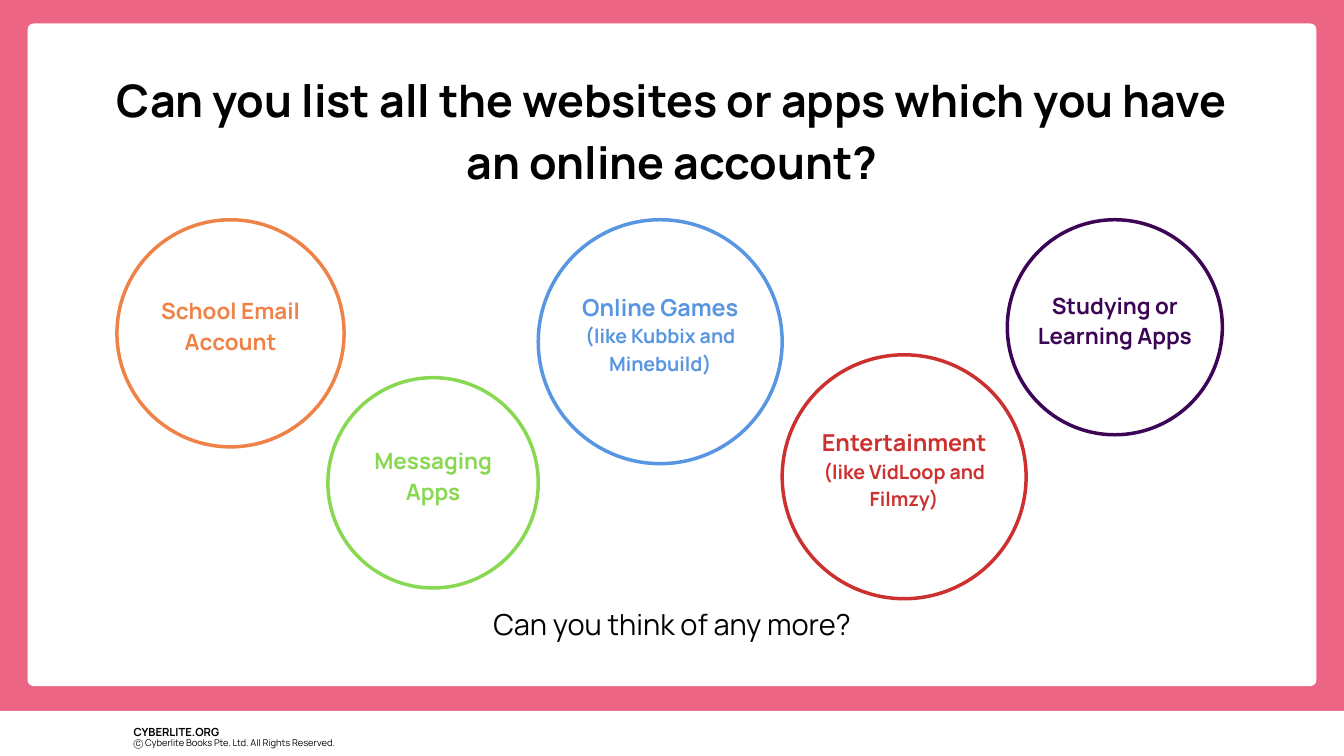
"""Build the slide asking which websites and apps hold an online account."""
from dataclasses import dataclass

import pptx
import pptx.dml.color
import pptx.enum.shapes
import pptx.enum.text
import pptx.util
from pptx.util import Inches

FONT = "Manrope"
COLOURS = {
    "pink": "EC6585",
    "white": "FFFFFF",
    "black": "000000",
    "orange": "EF8247",
    "purple": "3C0555",
    "blue": "5996E2",
    "red": "CC302F",
    "green": "88D852",
}
SHAPES = pptx.enum.shapes.MSO_SHAPE
ALIGN = pptx.enum.text.PP_ALIGN
ANCHOR = pptx.enum.text.MSO_ANCHOR


@dataclass(frozen=True)
class Line:
    text: str
    size: float
    bold: bool = True


@dataclass(frozen=True)
class Circle:
    left: float
    top: float
    diameter: float
    colour: str
    lines: tuple[Line, ...]


@dataclass(frozen=True)
class Label:
    left: float
    top: float
    width: float
    height: float
    line: Line
    align: ALIGN = ALIGN.CENTER
    spacing: float = 1.15


CIRCLES = (
    Circle(1.74, 3.27, 3.38, "orange", (Line("School Email Account", 24),)),
    Circle(14.99, 3.27, 3.2, "purple", (Line("Studying or Learning Apps", 24),)),
    Circle(8.01, 3.27, 3.63, "blue",
           (Line("Online Games", 25), Line("(like Kubbix and Minebuild)", 21))),
    Circle(11.64, 5.28, 3.63, "red",
           (Line("Entertainment", 25), Line("(like VidLoop and Filmzy)", 21))),
    Circle(4.88, 5.62, 3.13, "green", (Line("Messaging Apps", 24),)),
)
LABELS = (
    Label(1.99, 10.72, 1.85, 0.23, Line("CYBERLITE.ORG", 12), ALIGN.LEFT, 1.4),
    Label(1.99, 10.9, 4.63, 0.17,
          Line("Ⓒ Cyberlite Books Pte. Ltd. All Rights Reserved.", 10, False), ALIGN.LEFT, 1.4),
    Label(1.3, 0.97, 17.4, 1.74,
          Line("Can you list all the websites or apps which you have an online account?", 48)),
    Label(2.04, 8.95, 15.92, 0.52, Line("Can you think of any more?", 31, False)),
)


def rgb(name: str) -> pptx.dml.color.RGBColor:
    """Return the named colour."""
    return pptx.dml.color.RGBColor.from_string(COLOURS[name])


def add_panel(page, kind: SHAPES, left: float, top: float, width: float, height: float,
              outline: str | None = None):
    """Add a white shape with an optional coloured outline."""
    panel = page.shapes.add_shape(kind, Inches(left), Inches(top), Inches(width), Inches(height))
    panel.shadow.inherit = False
    panel.fill.solid()
    panel.fill.fore_color.rgb = rgb("white")
    if outline:
        panel.line.color.rgb = rgb(outline)
        panel.line.width = pptx.util.Pt(3.75)
    else:
        panel.line.fill.background()
    return panel


def add_text(page, left: float, top: float, width: float, height: float,
             lines: tuple[Line, ...], colour: str, align: ALIGN = ALIGN.CENTER,
             spacing: float = 1.15, inset: float = 0, anchor: ANCHOR = ANCHOR.TOP) -> None:
    """Add a wrapped text box with one paragraph per line."""
    box = page.shapes.add_textbox(Inches(left), Inches(top), Inches(width), Inches(height))
    frame = box.text_frame
    frame.word_wrap = True
    frame.vertical_anchor = anchor
    frame.margin_left = frame.margin_right = Inches(inset)
    frame.margin_top = frame.margin_bottom = Inches(inset)
    for index, line in enumerate(lines):
        para = frame.add_paragraph() if index else frame.paragraphs[0]
        para.text = line.text
        para.alignment = align
        para.line_spacing = spacing
        para.font.name = FONT
        para.font.size = pptx.util.Pt(line.size)
        para.font.bold = line.bold
        para.font.color.rgb = rgb(colour)


def add_circle(page, circle: Circle) -> None:
    """Add an outlined circle and the text box inside it."""
    size = circle.diameter
    add_panel(page, SHAPES.OVAL, circle.left, circle.top, size, size, circle.colour)
    add_text(page, circle.left + 0.094 * size, circle.top + 0.012 * size,
             0.812 * size, 0.895 * size, circle.lines, circle.colour,
             inset=0.06, anchor=ANCHOR.MIDDLE)


def add_label(page, label: Label) -> None:
    """Add a black label."""
    add_text(page, label.left, label.top, label.width, label.height,
             (label.line,), "black", label.align, label.spacing)


def main() -> None:
    """Build and save the deck."""
    deck = pptx.Presentation()
    deck.slide_width, deck.slide_height = Inches(20), Inches(11.25)
    page = deck.slides.add_slide(deck.slide_layouts[6])
    page.background.fill.solid()
    page.background.fill.fore_color.rgb = rgb("pink")
    add_panel(page, SHAPES.RECTANGLE, 0, 10.58, 20, 0.67)
    card = add_panel(page, SHAPES.ROUNDED_RECTANGLE, 0.41, 0.35, 19.18, 9.86)
    card.adjustments[0] = 0.09 / 9.86
    for circle in CIRCLES:
        add_circle(page, circle)
    for label in LABELS:
        add_label(page, label)
    deck.save("out.pptx")


if __name__ == "__main__":
    main()
